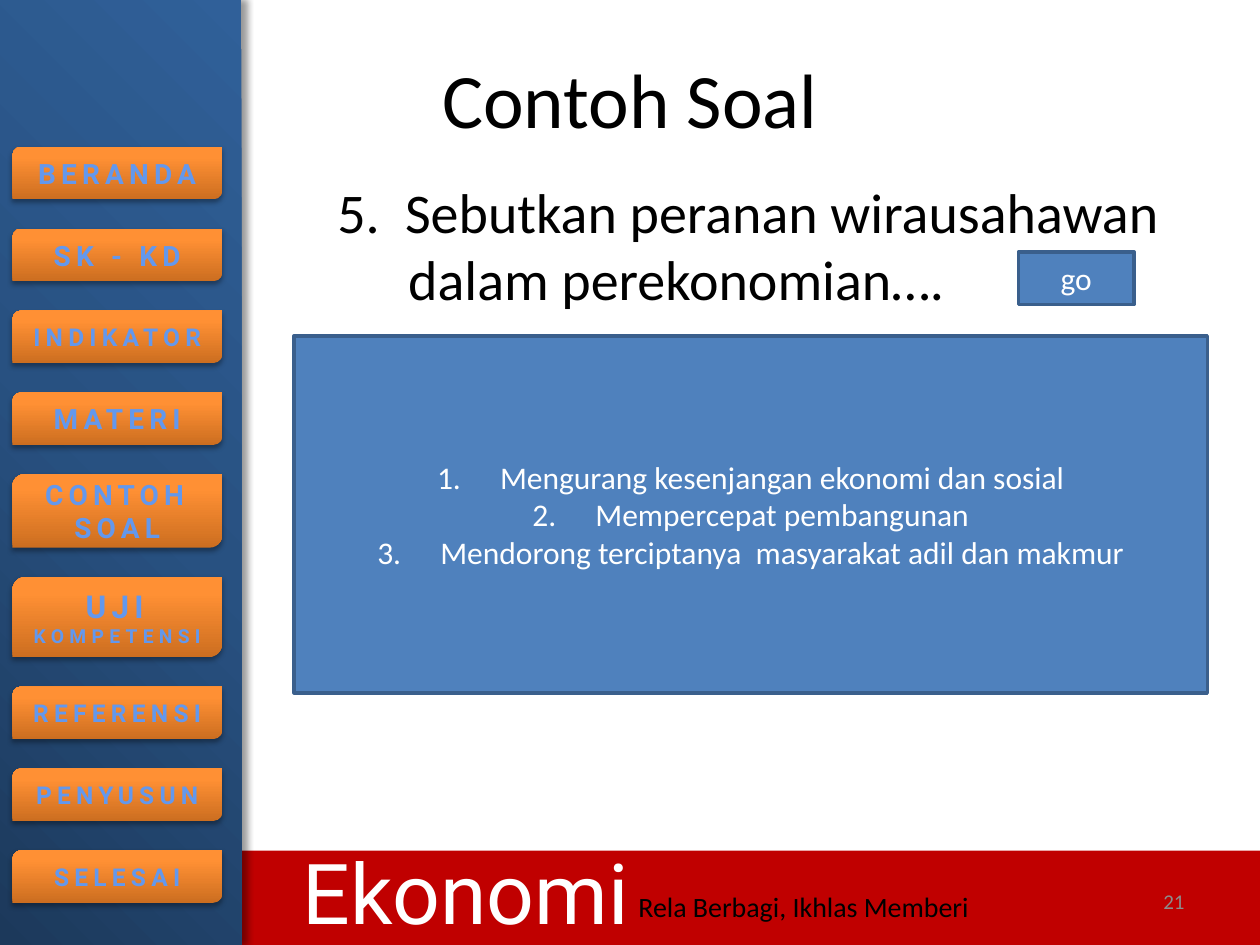
import pptx
import pptx.util
import pptx.dml.color
import pptx.enum.shapes
import pptx.enum.text
import pptx.oxml
import pptx.oxml.ns
from dataclasses import dataclass

Cm = pptx.util.Cm
Pt = pptx.util.Pt
ALIGN = pptx.enum.text.PP_ALIGN
ANCHOR = pptx.enum.text.MSO_ANCHOR
SHAPE = pptx.enum.shapes.MSO_SHAPE


@dataclass(frozen=True)
class Theme:
    body_font: str = "Calibri"
    menu_font: str = "Roboto"
    black: str = "000000"
    white: str = "FFFFFF"
    grey: str = "8C8C8C"
    red: str = "C00000"
    blue: str = "4F81BD"
    blue_edge: str = "3A5F8C"
    glyph_edge: str = "F4F6F9"
    panel_stops: tuple = ((0, "1C395B"), (50, "285181"), (100, "306099"))
    button_stops: tuple = ((0, "CC6E20"), (80, "FF9034"), (100, "FF9136"))
    glyph_stops: tuple = ((10, "6398ED"), (75, "265EA0"))
    title: int = 44
    brand: int = 48
    question: int = 32
    answer: int = 18
    motto: int = 16
    number: int = 12


def element(xml):
    tag_end = min(xml.index(c) for c in " />" if c in xml)
    return pptx.oxml.parse_xml(
        f"{xml[:tag_end]} {pptx.oxml.ns.nsdecls('a')}{xml[tag_end:]}")


def gradient(stops, direction):
    marks = "".join(f'<a:gs pos="{pos * 1000}"><a:srgbClr val="{color}"/></a:gs>'
                    for pos, color in stops)
    return element(f"<a:gradFill><a:gsLst>{marks}</a:gsLst>{direction}</a:gradFill>")


def linear(degrees):
    return f'<a:lin ang="{degrees * 60000}" scaled="0"/>'


CORNER = ('<a:path path="circle"><a:fillToRect l="0" t="100000" '
          'r="100000" b="0"/></a:path>')


class SlideBuilder:
    def __init__(self, slide, theme):
        self.slide = slide
        self.theme = theme

    def run(self, paragraph, text, size, color, font=None):
        run = paragraph.add_run()
        run.text = text
        run.font.size = Pt(size)
        run.font.name = font or self.theme.body_font
        if color:
            run.font.color.rgb = pptx.dml.color.RGBColor.from_string(color)
        return run

    def glow_run(self, paragraph, text, size):
        run = self.run(paragraph, text, size, None, self.theme.menu_font)
        run.font.bold = True
        properties = run.font._element
        properties.set("spc", "300")
        properties.insert(0, element(
            '<a:ln w="11430"><a:solidFill>'
            f'<a:srgbClr val="{self.theme.glyph_edge}"/></a:solidFill></a:ln>'))
        properties.insert(1, gradient(self.theme.glyph_stops, linear(90)))

    def text(self, box, text, size, color, align=ALIGN.LEFT, anchor=ANCHOR.TOP,
             wrap=True, font=None, hanging=0):
        frame = self.slide.shapes.add_textbox(*map(Cm, box)).text_frame
        frame.word_wrap = wrap
        frame.vertical_anchor = anchor
        paragraph = frame.paragraphs[0]
        paragraph.alignment = align
        if hanging:
            self.indent(paragraph, hanging)
        self.run(paragraph, text, size, color, font)

    def indent(self, paragraph, hanging):
        properties = paragraph._p.get_or_add_pPr()
        properties.set("marL", str(Cm(hanging)))
        properties.set("indent", str(-Cm(hanging)))
        return properties

    def plain_shape(self, kind, box):
        shape = self.slide.shapes.add_shape(kind, *map(Cm, box))
        shape.shadow.inherit = False
        shape.line.fill.background()
        return shape

    def block(self, box, fill, edge=None):
        shape = self.plain_shape(SHAPE.RECTANGLE, box)
        shape.fill.solid()
        shape.fill.fore_color.rgb = pptx.dml.color.RGBColor.from_string(fill)
        if edge:
            shape.line.color.rgb = pptx.dml.color.RGBColor.from_string(edge)
            shape.line.width = Pt(2)
        return shape

    def shaded(self, kind, box, stops, direction, alpha, blur, distance, angle):
        shape = self.plain_shape(kind, box)
        properties = shape._element.spPr
        properties.insert(2, gradient(stops, direction))
        effects = properties.find(pptx.oxml.ns.qn("a:effectLst"))
        effects.append(element(
            f'<a:outerShdw blurRad="{Pt(blur)}" dist="{Pt(distance)}" '
            f'dir="{angle * 60000}" rotWithShape="0"><a:srgbClr val="{self.theme.black}">'
            f'<a:alpha val="{alpha * 1000}"/></a:srgbClr></a:outerShdw>'))
        return shape

    def button(self, box, parts):
        shape = self.shaded(SHAPE.ROUND_2_DIAG_RECTANGLE, box,
                            self.theme.button_stops, linear(270), 35, 3.1, 1.8, 90)
        shape.text_frame.vertical_anchor = ANCHOR.MIDDLE
        paragraph = shape.text_frame.paragraphs[0]
        paragraph.alignment = ALIGN.CENTER
        for label, size in parts:
            self.glow_run(paragraph, label, size)

    def answer_box(self, box, lines, numbered=False):
        frame = self.block(box, self.theme.blue, self.theme.blue_edge).text_frame
        frame.vertical_anchor = ANCHOR.MIDDLE
        for index, line in enumerate(lines):
            paragraph = frame.add_paragraph() if index else frame.paragraphs[0]
            if numbered:
                self.indent(paragraph, 1.27).append(
                    element('<a:buAutoNum type="arabicPeriod"/>'))
            paragraph.alignment = ALIGN.CENTER
            self.run(paragraph, line, self.theme.answer, self.theme.white)


def main():
    deck = pptx.Presentation()
    deck.slide_width, deck.slide_height = Cm(25.4), Cm(19.05)
    theme = Theme()
    page = SlideBuilder(deck.slides.add_slide(deck.slide_layouts[6]), theme)

    page.block((0, 17.15, 25.4, 1.9), theme.red)
    page.text((5.77, 16.81, 7.24, 2.31), "Ekonomi", theme.brand, theme.white,
              ALIGN.CENTER, wrap=False, font=theme.menu_font)
    page.shaded(SHAPE.RECTANGLE, (0, 0, 4.87, 19.05), theme.panel_stops,
                CORNER, 40, 4, 3, 0)

    menu = [
        (1.06, [("BERANDA", 16)]),
        (1.06, [("SK - KD", 16)]),
        (1.06, [("INDIKATOR", 14)]),
        (1.06, [("MATERI", 16)]),
        (1.48, [("CONTOH SOAL", 16)]),
        (1.62, [("UJI", 18), (" KOMPETENSI", 11)]),
        (1.06, [("REFERENSI", 14)]),
        (1.06, [("PENYUSUN", 14)]),
        (1.06, [("SELESAI", 14)]),
    ]
    top, gap = 2.96, 0.59
    for height, parts in menu:
        page.button((0.25, top, 4.23, height), parts)
        top += height + gap

    page.text((12.62, 17.81, 7.85, 0.94), "Rela Berbagi, Ikhlas Memberi",
              theme.motto, theme.black, wrap=False)
    page.text((1.27, 0.76, 22.86, 2.41), "Contoh Soal", theme.title, theme.black,
              ALIGN.CENTER, ANCHOR.MIDDLE)
    page.text((6.55, 3.45, 17.58, 12.7),
              "5.  Sebutkan peranan wirausahawan dalam perekonomian….",
              theme.question, theme.black, hanging=1.43)
    page.text((18.2, 17.66, 5.93, 1.01), "21", theme.number, theme.grey,
              ALIGN.RIGHT, ANCHOR.MIDDLE)
    page.answer_box((20.53, 5.08, 2.33, 1.06), ["go"])
    page.answer_box((5.93, 6.77, 18.41, 7.2), [
        "Mengurang kesenjangan ekonomi dan sosial",
        "Mempercepat pembangunan",
        "Mendorong terciptanya  masyarakat adil dan makmur",
    ], numbered=True)

    deck.save("out.pptx")


if __name__ == "__main__":
    main()
